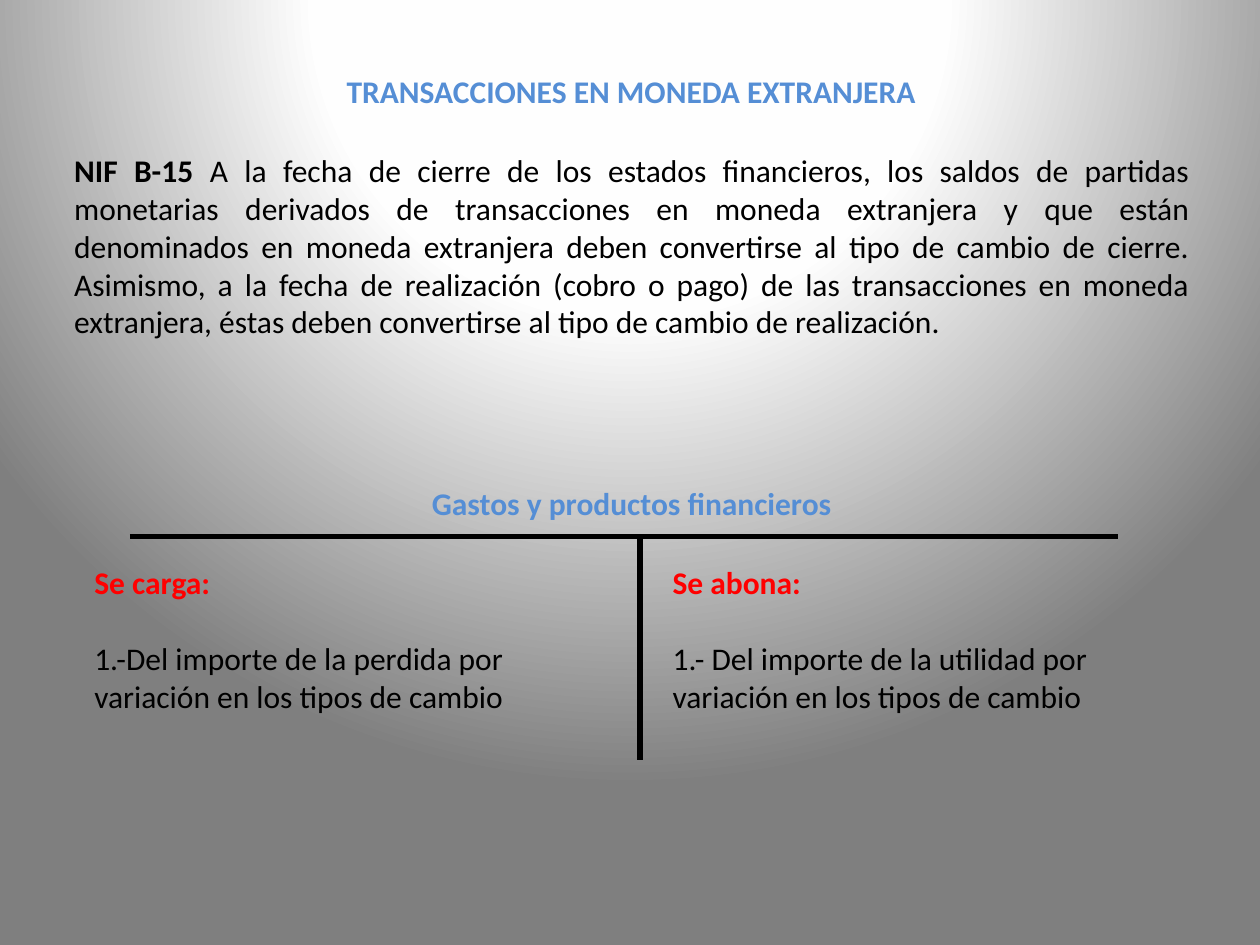
from pptx import Presentation
from pptx.dml.color import RGBColor
from pptx.enum.shapes import MSO_CONNECTOR
from pptx.enum.text import MSO_AUTO_SIZE, PP_ALIGN
from pptx.oxml import parse_xml
from pptx.oxml.ns import qn
from pptx.util import Inches, Pt

BLACK, BLUE, RED = "000000", "558ED5", "FF0000"
GRADIENT_STOPS = [(0, "FFFFFF"), (40, "FEFEFE"), (100, "7F7F7F")]
PRINCIPLE = (
    "A la fecha de cierre de los estados financieros, los saldos de partidas "
    "monetarias derivados de transacciones en moneda extranjera y que están "
    "denominados en moneda extranjera deben convertirse al tipo de cambio de cierre. "
    "Asimismo, a la fecha de realización (cobro o pago) de las transacciones en "
    "moneda extranjera, éstas deben convertirse al tipo de cambio de realización."
)
CHARGE = "1.-Del importe de la perdida por variación en los tipos de cambio"
CREDIT = "1.- Del importe de la utilidad por variación en los tipos de cambio"


def color(value):
    return RGBColor.from_string(value)


def paint_background(slide):
    stops = "".join(
        f'<a:gs pos="{position * 1000}"><a:srgbClr val="{value}"/></a:gs>'
        for position, value in GRADIENT_STOPS
    )
    background = parse_xml(
        '<p:bg xmlns:p="http://schemas.openxmlformats.org/presentationml/2006/main" '
        'xmlns:a="http://schemas.openxmlformats.org/drawingml/2006/main"><p:bgPr>'
        f'<a:gradFill rotWithShape="1"><a:gsLst>{stops}</a:gsLst><a:path path="circle">'
        '<a:fillToRect l="50000" t="-80000" r="50000" b="180000"/></a:path>'
        "</a:gradFill><a:effectLst/></p:bgPr></p:bg>"
    )
    slide.element.find(qn("p:cSld")).insert(0, background)


def add_frame(slide, left, top, width, height):
    frame = slide.shapes.add_textbox(
        Inches(left), Inches(top), Inches(width), Inches(height)
    ).text_frame
    frame.word_wrap = True
    frame.auto_size = MSO_AUTO_SIZE.SHAPE_TO_FIT_TEXT
    return frame


def style(paragraph, value, bold=None, align=PP_ALIGN.LEFT):
    paragraph.alignment = align
    paragraph.font.name = "Calibri"
    paragraph.font.size = Pt(18)
    paragraph.font.bold = bold
    paragraph.font.color.rgb = color(value)


def add_heading(slide, left, top, width, heading):
    paragraph = add_frame(slide, left, top, width, 0.4).paragraphs[0]
    paragraph.text = heading
    style(paragraph, BLUE, True, PP_ALIGN.CENTER)


def add_principle(slide, left, top, width, height):
    paragraph = add_frame(slide, left, top, width, height).paragraphs[0]
    standard = paragraph.add_run()
    standard.text = "NIF B-15 "
    standard.font.bold = True
    paragraph.add_run().text = PRINCIPLE
    style(paragraph, BLACK, align=PP_ALIGN.JUSTIFY)


def add_entry(slide, left, top, width, height, label, detail):
    frame = add_frame(slide, left, top, width, height)
    title = frame.paragraphs[0]
    title.text = label
    title.space_after = Pt(22)
    style(title, RED, True)
    body = frame.add_paragraph()
    body.text = detail
    style(body, BLACK)


def add_rule(slide, x1, y1, x2, y2):
    rule = slide.shapes.add_connector(
        MSO_CONNECTOR.STRAIGHT, Inches(x1), Inches(y1), Inches(x2), Inches(y2)
    )
    rule.line.color.rgb = color(BLACK)
    rule.line.width = Pt(3)
    rule._element.spPr.append(rule._element.makeelement(qn("a:effectLst"), {}))


def add_t_account(slide, left, top, width, height):
    add_heading(slide, left + 1.07, top - 0.47, 5.83, "Gastos y productos financieros")
    add_entry(slide, left - 0.38, top + 0.16, 4.39, 1.31, "Se carga:", CHARGE)
    add_entry(slide, left + 4.21, top + 0.16, 3.86, 1.31, "Se abona:", CREDIT)
    stem = left + 4.05
    add_rule(slide, left, top, left + width, top)
    add_rule(slide, stem, top, stem, top + height)


def main():
    presentation = Presentation()
    presentation.slide_width = Inches(10)
    presentation.slide_height = Inches(7.5)
    slide = presentation.slides.add_slide(presentation.slide_layouts[6])
    paint_background(slide)
    add_heading(slide, 2, 0.52, 6.02, "TRANSACCIONES EN MONEDA EXTRANJERA")
    add_principle(slide, 0.49, 1.15, 9.05, 1.62)
    add_t_account(slide, 1.03, 4.26, 7.84, 1.77)
    presentation.save("out.pptx")


if __name__ == "__main__":
    main()
